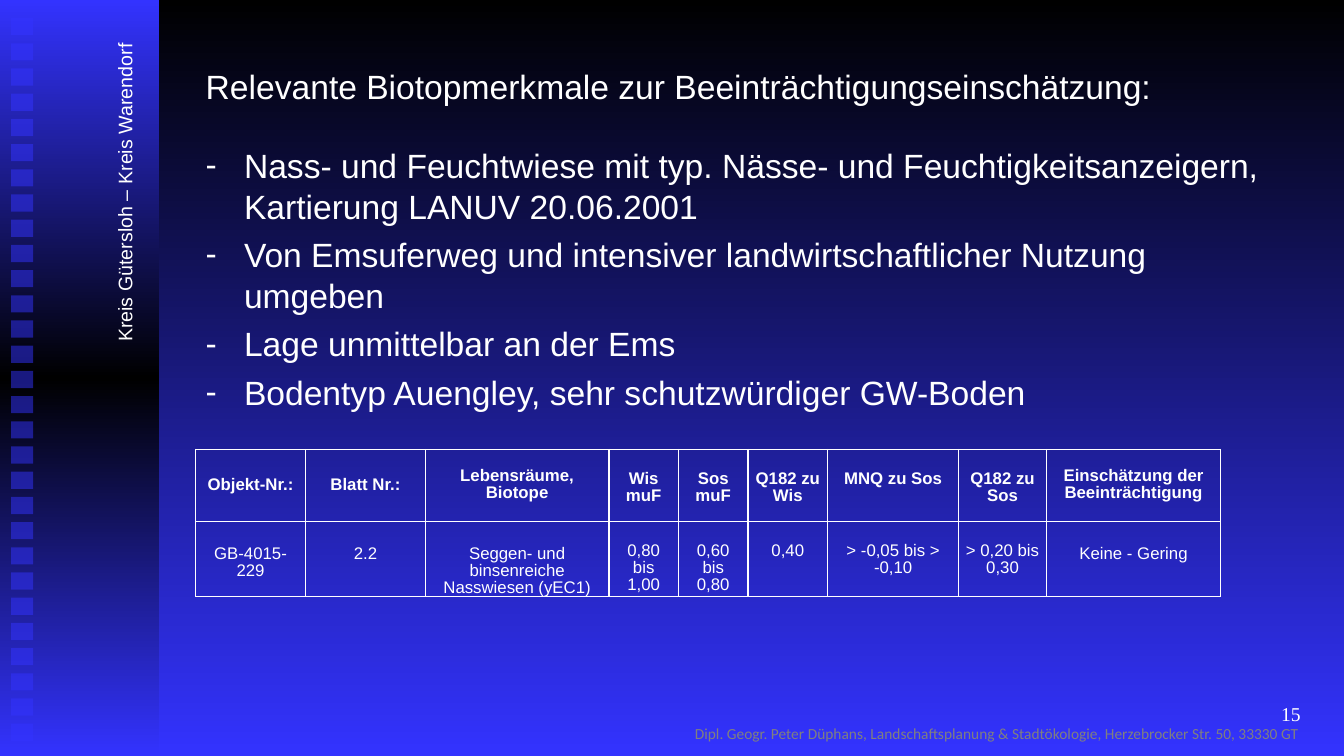
from dataclasses import dataclass
from lxml.etree import SubElement
from pptx import Presentation
from pptx.dml.color import RGBColor
from pptx.enum.shapes import MSO_SHAPE as Shape
from pptx.enum.text import MSO_ANCHOR as Anchor, MSO_AUTO_SIZE as AutoSize, PP_ALIGN as Align
from pptx.oxml.ns import qn
from pptx.util import Inches, Pt


@dataclass(frozen=True)
class Theme:
    blue: str = "3333FF"
    black: str = "000000"
    white: str = "FFFFFF"
    grey: str = "808080"
    font: str = "Arial"
    body: int = 24
    label: int = 14
    cell: int = 12
    footer: int = 11


theme = Theme()


def style(para, size, color=theme.white, font=theme.font, align=Align.LEFT, bold=False):
    para.alignment = align
    para.font.size = Pt(size)
    para.font.name = font
    para.font.bold = bold
    para.font.color.rgb = RGBColor.from_string(color)


def place(box, left, top, width, height, anchor=Anchor.TOP):
    box.left, box.top, box.width, box.height = map(Inches, (left, top, width, height))
    frame = box.text_frame
    frame.word_wrap = True
    frame.auto_size = AutoSize.NONE
    frame.vertical_anchor = anchor
    return frame


deck = Presentation()
deck.slide_width, deck.slide_height = Inches(13.33), Inches(7.5)
page = deck.slides.add_slide(deck.slide_layouts[1])

backdrop = page.background.fill
backdrop.gradient()
backdrop.gradient_angle = 270
for stop, color in zip(backdrop.gradient_stops, (theme.black, theme.blue)):
    stop.color.rgb = RGBColor.from_string(color)

panel = page.shapes.add_shape(Shape.RECTANGLE, 0, 0, Inches(1.58), deck.slide_height)
panel.shadow.inherit = False
panel.line.fill.background()
panel.fill.gradient()
panel.fill.gradient_angle = 270
stops = panel._element.spPr.find(".//" + qn("a:gsLst"))
stops.clear()
for position, color in ((0, theme.blue), (50, theme.black), (100, theme.blue)):
    stop = SubElement(stops, qn("a:gs"), pos=str(position * 1000))
    SubElement(stop, qn("a:srgbClr"), val=color)

for index in range(29):
    square = page.shapes.add_shape(
        Shape.RECTANGLE, Inches(0.11), Inches(0.18 + 0.25 * index), Inches(0.22), Inches(0.17))
    square.shadow.inherit = False
    square.line.fill.background()
    square.fill.solid()
    square.fill.fore_color.rgb = RGBColor.from_string(theme.blue)
    tint = square._element.spPr.find(".//" + qn("a:srgbClr"))
    SubElement(tint, qn("a:alpha"), val="50000")

title = place(page.shapes.title, 1.94, 0.6, 10.16, 0.5)
title.text = "Relevante Biotopmerkmale zur Beeinträchtigungseinschätzung:"
style(title.paragraphs[0], theme.body)

features = (
    "Nass- und Feuchtwiese mit typ. Nässe- und Feuchtigkeitsanzeigern, Kartierung LANUV 20.06.2001",
    "Von Emsuferweg und intensiver landwirtschaftlicher Nutzung umgeben",
    "Lage unmittelbar an der Ems",
    "Bodentyp Auengley, sehr schutzwürdiger GW-Boden",
)
body = place(page.placeholders[1], 1.94, 1.39, 10.71, 2.78)
body.text = "\n".join(features)
for index, para in enumerate(body.paragraphs):
    para.space_before = Pt(6 if index else 0)
    props = para._p.get_or_add_pPr()
    props.set("marL", str(Inches(0.38)))
    props.set("indent", str(-Inches(0.38)))
    SubElement(props, qn("a:buChar"), char="-")
    style(para, theme.body)

labels = (
    ("Kreis Gütersloh – Kreis Warendorf", (-0.49, 1.59, 3.46, 0.34), 270, Anchor.TOP,
     (theme.label, theme.white, theme.font, Align.LEFT)),
    ("Dipl. Geogr. Peter Düphans, Landschaftsplanung & Stadtökologie, Herzebrocker Str. 50, 33330 GT",
     (6.45, 7.03, 6.88, 0.5), 0, Anchor.MIDDLE,
     (theme.footer, theme.grey, "Calibri", Align.CENTER)),
    ("15", (10.22, 6.83, 2.78, 0.5), 0, Anchor.MIDDLE,
     (theme.label, theme.white, "Times New Roman", Align.RIGHT)),
)
for text, area, rotation, anchor, look in labels:
    box = page.shapes.add_textbox(0, 0, 0, 0)
    frame = place(box, *area, anchor)
    box.rotation = rotation
    frame.text = text
    style(frame.paragraphs[0], *look)

rows = (
    ("Objekt-Nr.:", "Blatt Nr.:", "Lebensräume, Biotope", "Wis muF", "Sos muF", "Q182 zu Wis",
     "MNQ zu Sos", "Q182 zu Sos", "Einschätzung der Beeinträchtigung"),
    ("GB-4015-229", "2.2", "Seggen- und binsenreiche Nasswiesen (yEC1)", "0,80 bis 1,00",
     "0,60 bis 0,80", "0,40", "> -0,05 bis > -0,10", "> 0,20 bis 0,30", "Keine - Gering"),
)
widths = (1.09, 1.19, 1.82, 0.69, 0.69, 0.79, 1.3, 0.87, 1.73)
heights = (0.71, 0.75)
table = page.shapes.add_table(
    len(rows), len(widths), Inches(1.94), Inches(4.46), Inches(sum(widths)), Inches(sum(heights))).table
table.first_row = table.horz_banding = False
for column, width in zip(table.columns, widths):
    column.width = Inches(width)
for row, height, texts in zip(table.rows, heights, rows):
    row.height = Inches(height)
    header = texts is rows[0]
    for index, (cell, text) in enumerate(zip(row.cells, texts)):
        measured = 3 <= index <= 7
        centred = header and not measured
        cell.vertical_anchor = Anchor.MIDDLE if centred else Anchor.TOP
        cell.margin_left = cell.margin_right = Inches(0.07)
        cell.margin_top = Inches(0 if centred else 0.22 if measured else 0.25)
        cell.margin_bottom = 0
        props = cell._tc.get_or_add_tcPr()
        for side in ("a:lnL", "a:lnR", "a:lnT", "a:lnB"):
            border = SubElement(props, qn(side), w=str(Pt(1)))
            SubElement(SubElement(border, qn("a:solidFill")), qn("a:srgbClr"), val=theme.white)
        cell.fill.background()
        cell.text = text
        para = cell.text_frame.paragraphs[0]
        para.line_spacing = Pt(12)
        style(para, theme.cell, align=Align.CENTER, bold=header)

deck.save("out.pptx")
